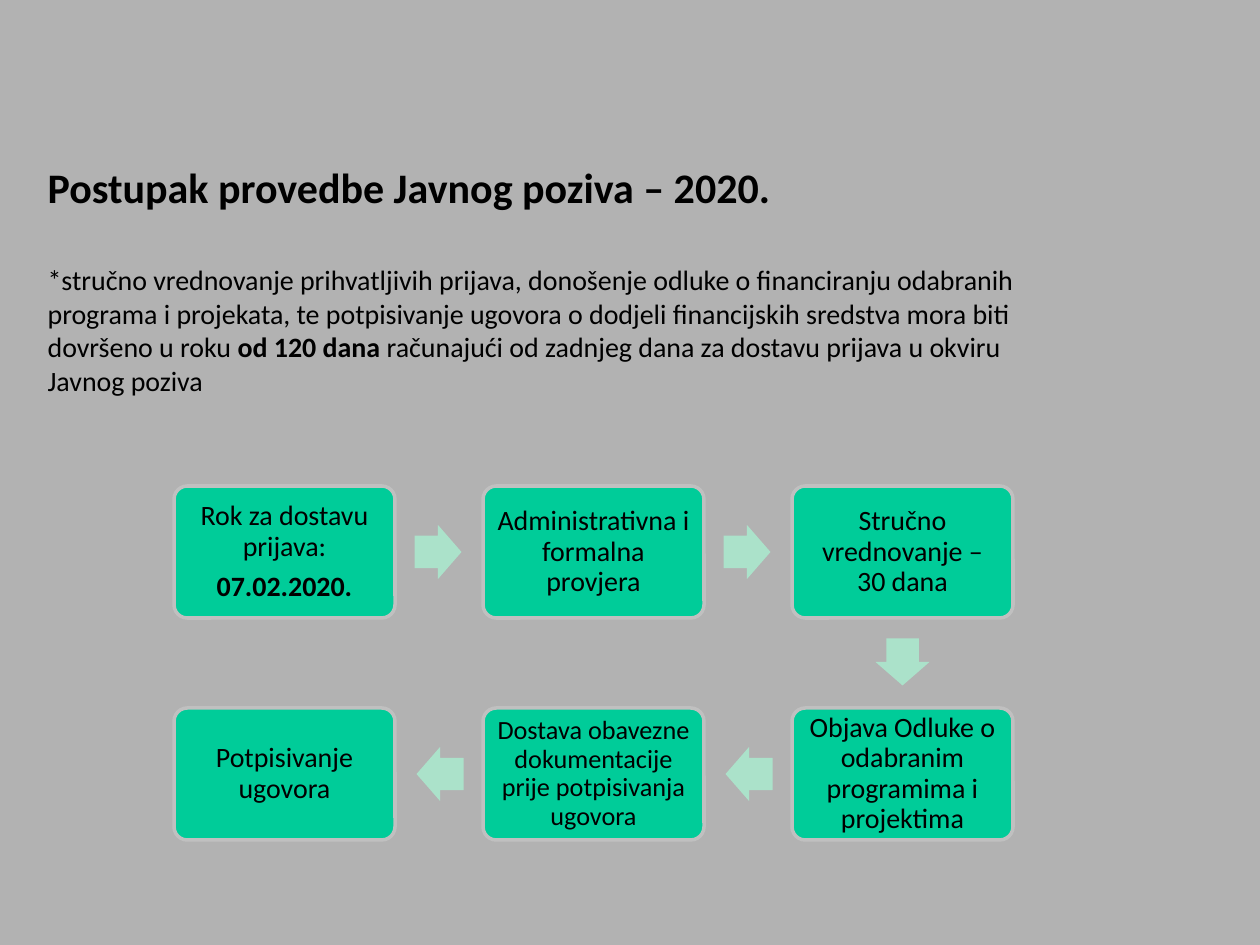
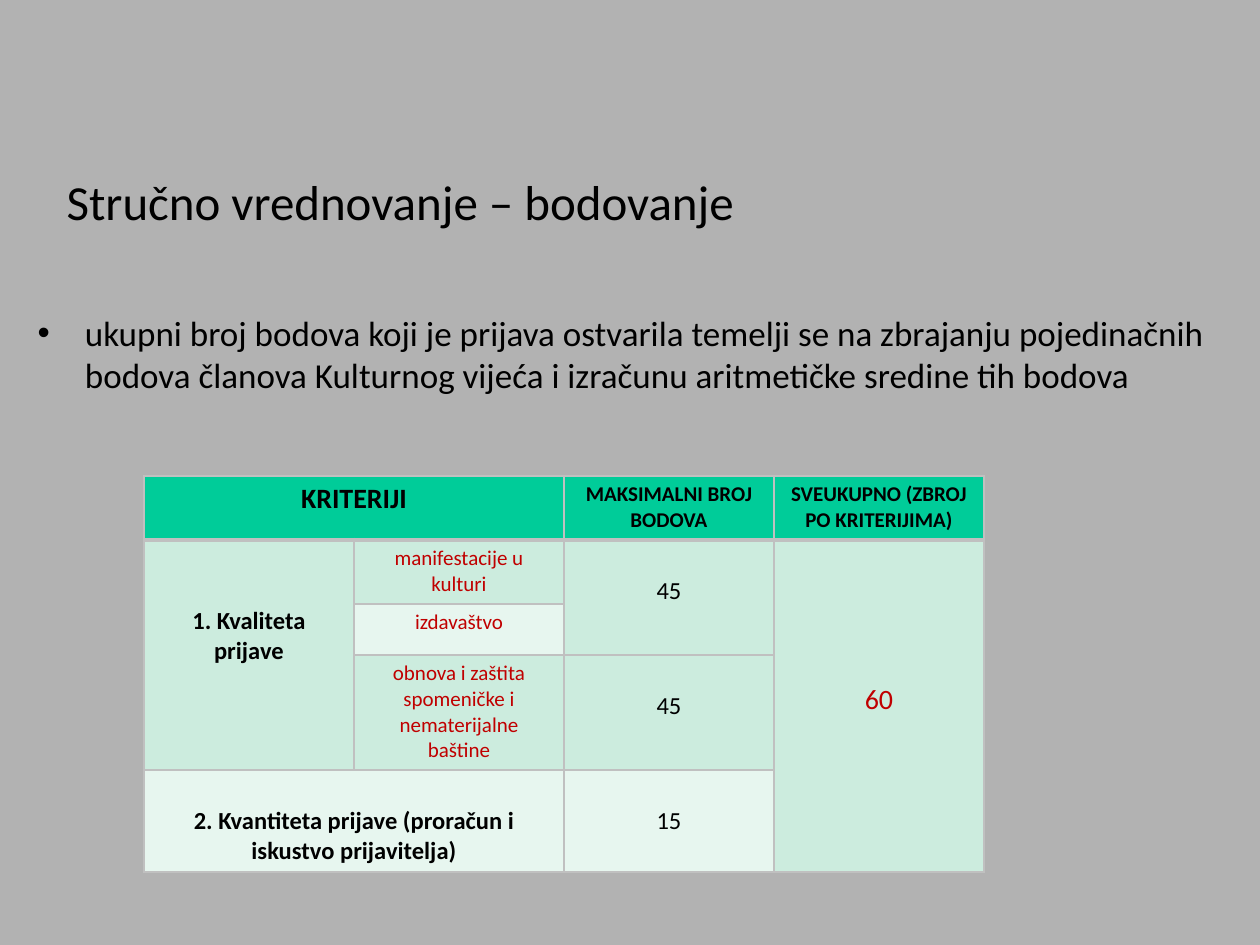
from math import atan2, degrees

from lxml.etree import SubElement
from pptx import Presentation
from pptx.dml.color import RGBColor
from pptx.enum.shapes import MSO_SHAPE
from pptx.enum.text import MSO_ANCHOR, MSO_AUTO_SIZE, PP_ALIGN
from pptx.oxml.ns import qn
from pptx.util import Pt

EMU_PER_PX = 914400 / 126
FONT = "Calibri"
BACKGROUND, BLACK, RED = "B2B2B2", "000000", "C00000"
GREEN, ARROW_GREEN, OUTLINE = "00CC99", "ABE2CA", "C0C0C0"
BANDS = ["E7F6EF", "CCECDE"]

STEP_WIDTH, STEP_HEIGHT = 221, 132
STEPS = [
    (0, 0, ["Rok za dostavu prijava:", "07.02.2020."], 16),
    (1, 0, ["Administrativna i formalna provjera"], 16),
    (2, 0, ["Stručno vrednovanje – 30 dana"], 16),
    (2, 1, ["Objava Odluke o odabranim programima i projektima"], 16),
    (1, 1, ["Dostava obavezne dokumentacije prije potpisivanja ugovora"], 15),
    (0, 1, ["Potpisivanje ugovora"], 16),
]

ROW_HEIGHTS = [64, 64, 51, 115, 102]
# row, column, rows spanned, columns spanned, text, size, bold, colour, top margin
CRITERIA = [
    (0, 0, 1, 2, "KRITERIJI", 16, True, BLACK, 6),
    (0, 2, 1, 1, "MAKSIMALNI BROJ BODOVA", 12, True, BLACK, 6),
    (0, 3, 1, 1, "SVEUKUPNO (ZBROJ PO KRITERIJIMA)", 12, True, BLACK, 6),
    (1, 0, 3, 1, "1. Kvaliteta prijave", 14, True, BLACK, 66),
    (1, 1, 1, 1, "manifestacije u kulturi", 12, False, RED, 6),
    (1, 2, 2, 1, "45", 14, False, BLACK, 36),
    (1, 3, 4, 1, "60", 16, False, RED, 143),
    (2, 1, 1, 1, "izdavaštvo", 12, False, RED, 6),
    (3, 1, 1, 1, "obnova i zaštita spomeničke i nematerijalne baštine", 12, False, RED, 6),
    (3, 2, 1, 1, "45", 14, False, BLACK, 36),
    (4, 0, 1, 2, "2. Kvantiteta prijave (proračun i iskustvo prijavitelja)", 14, True, BLACK, 36),
    (4, 2, 1, 1, "15", 14, False, BLACK, 36),
]


def px(length):
    """Turn a length in px into EMU."""
    return round(length * EMU_PER_PX)


def colour(hex_code):
    """Turn a hex string into a colour."""
    return RGBColor.from_string(hex_code)


def style(paragraph, size, bold=None, hex_code=BLACK, align=PP_ALIGN.LEFT):
    """Format a whole paragraph."""
    paragraph.alignment = align
    paragraph.font.name = FONT
    paragraph.font.size = Pt(size)
    paragraph.font.bold = bold
    paragraph.font.color.rgb = colour(hex_code)


def place(placeholder, left, top, width, height):
    """Move a placeholder and return its top-anchored text frame."""
    placeholder.left, placeholder.top = px(left), px(top)
    placeholder.width, placeholder.height = px(width), px(height)
    frame = placeholder.text_frame
    frame.auto_size = MSO_AUTO_SIZE.NONE
    frame.vertical_anchor = MSO_ANCHOR.TOP
    return frame


def step_origin(column, row):
    """Return the top left corner of a step in the grid."""
    return 174 + 309 * column, 486 + 222 * row


def add_filled(slide, preset, left, top, width, height, hex_code):
    """Add a plain filled shape without outline or shadow."""
    shape = slide.shapes.add_shape(preset, px(left), px(top), px(width), px(height))
    shape.shadow.inherit = False
    shape.fill.solid()
    shape.fill.fore_color.rgb = colour(hex_code)
    shape.line.fill.background()
    return shape


def add_step(slide, column, row, lines, size):
    """Add one step of the procedure; a second line is bold."""
    left, top = step_origin(column, row)
    step = add_filled(slide, MSO_SHAPE.ROUNDED_RECTANGLE, left, top,
                      STEP_WIDTH, STEP_HEIGHT, GREEN)
    step.adjustments[0] = 0.1
    step.line.color.rgb = colour(OUTLINE)
    step.line.width = Pt(2)
    frame = step.text_frame
    frame.word_wrap = True
    frame.vertical_anchor = MSO_ANCHOR.MIDDLE
    frame.margin_left = frame.margin_right = px(9)
    frame.margin_top = frame.margin_bottom = px(9)
    frame.text = "\n".join(lines)
    for index, paragraph in enumerate(frame.paragraphs):
        style(paragraph, size, bold=index > 0, align=PP_ALIGN.CENTER)
        paragraph.line_spacing = 0.9
        paragraph.space_after = Pt(5.6)


def add_step_arrow(slide, start, end):
    """Add a block arrow midway between two neighbouring steps."""
    (x1, y1), (x2, y2) = step_origin(*start), step_origin(*end)
    across, down = end[0] - start[0], end[1] - start[1]
    width, height = 47, 54
    left = (x1 + x2 + STEP_WIDTH - width) / 2 - across
    top = (y1 + y2 + STEP_HEIGHT - height) / 2 - down
    arrow = add_filled(slide, MSO_SHAPE.RIGHT_ARROW, left, top, width, height, ARROW_GREEN)
    arrow.adjustments[0] = 0.6
    arrow.adjustments[1] = 0.5
    arrow.rotation = degrees(atan2(down, across))


def set_borders(cell, top, bottom):
    """Outline a cell, with its top and bottom widths in points."""
    properties = cell._tc.get_or_add_tcPr()
    for side, width in (("L", 1), ("R", 1), ("T", top), ("B", bottom)):
        border = SubElement(properties, qn(f"a:ln{side}"), w=str(Pt(width)))
        fill = SubElement(border, qn("a:solidFill"))
        SubElement(fill, qn("a:srgbClr"), val=OUTLINE)


def add_criteria_table(slide):
    """Add the table of criteria and points."""
    table = slide.shapes.add_table(len(ROW_HEIGHTS), 4, px(144), px(476),
                                   px(840), px(sum(ROW_HEIGHTS))).table
    for index, height in enumerate(ROW_HEIGHTS):
        table.rows[index].height = px(height)
        for cell in table.rows[index].cells:
            set_borders(cell, 3 if index == 1 else 1, 3 if index == 0 else 1)
            cell.fill.solid()
            cell.fill.fore_color.rgb = colour(BANDS[index % 2] if index else GREEN)
    for row, column, rows, columns, text, size, bold, hex_code, margin in CRITERIA:
        cell = table.cell(row, column)
        if rows * columns > 1:
            cell.merge(table.cell(row + rows - 1, column + columns - 1))
        cell.text = text
        cell.margin_top = px(margin)
        style(cell.text_frame.paragraphs[0], size, bold, hex_code, PP_ALIGN.CENTER)


def build_procedure(presentation):
    """Build the slide with the steps of the public call."""
    slide = presentation.slides.add_slide(presentation.slide_layouts[5])
    frame = place(slide.shapes.title, 35, 155, 1022, 277)
    heading = frame.paragraphs[0]
    heading.text = "Postupak provedbe Javnog poziva – 2020."
    style(heading, 24, bold=True)
    deadline = frame.add_paragraph()
    style(deadline, 16)
    deadline.space_before = Pt(29)
    for text, bold in (
        ("*stručno vrednovanje prihvatljivih prijava, donošenje odluke o financiranju "
         "odabranih programa i projekata, te potpisivanje ugovora o dodjeli financijskih "
         "sredstva mora biti dovršeno u roku ", False),
        ("od 120 dana ", True),
        ("računajući od zadnjeg dana za dostavu prijava u okviru Javnog poziva", False),
    ):
        run = deadline.add_run()
        run.text = text
        run.font.bold = bold
    for step in STEPS:
        add_step(slide, *step)
    for start, end in zip(STEPS, STEPS[1:]):
        add_step_arrow(slide, start[:2], end[:2])


def build_scoring(presentation):
    """Build the slide with the scoring rules."""
    slide = presentation.slides.add_slide(presentation.slide_layouts[1])
    frame = place(slide.shapes.title, 54, 165, 1134, 100)
    frame.text = "Stručno vrednovanje – bodovanje"
    style(frame.paragraphs[0], 28)
    rule = place(slide.placeholders[1], 25, 255, 1198, 655)
    rule.margin_top = px(56)
    rule.text = ("ukupni broj bodova koji je prijava ostvarila temelji se na zbrajanju "
                 "pojedinačnih bodova članova Kulturnog vijeća i izračunu aritmetičke "
                 "sredine tih bodova")
    style(rule.paragraphs[0], 20)
    rule.paragraphs[0].space_before = Pt(0)
    add_criteria_table(slide)


def main():
    """Build and save the presentation."""
    presentation = Presentation()
    presentation.slide_width, presentation.slide_height = px(1260), px(945)
    backdrop = presentation.slide_master.background.fill
    backdrop.solid()
    backdrop.fore_color.rgb = colour(BACKGROUND)
    build_procedure(presentation)
    build_scoring(presentation)
    presentation.save("out.pptx")


if __name__ == "__main__":
    main()
